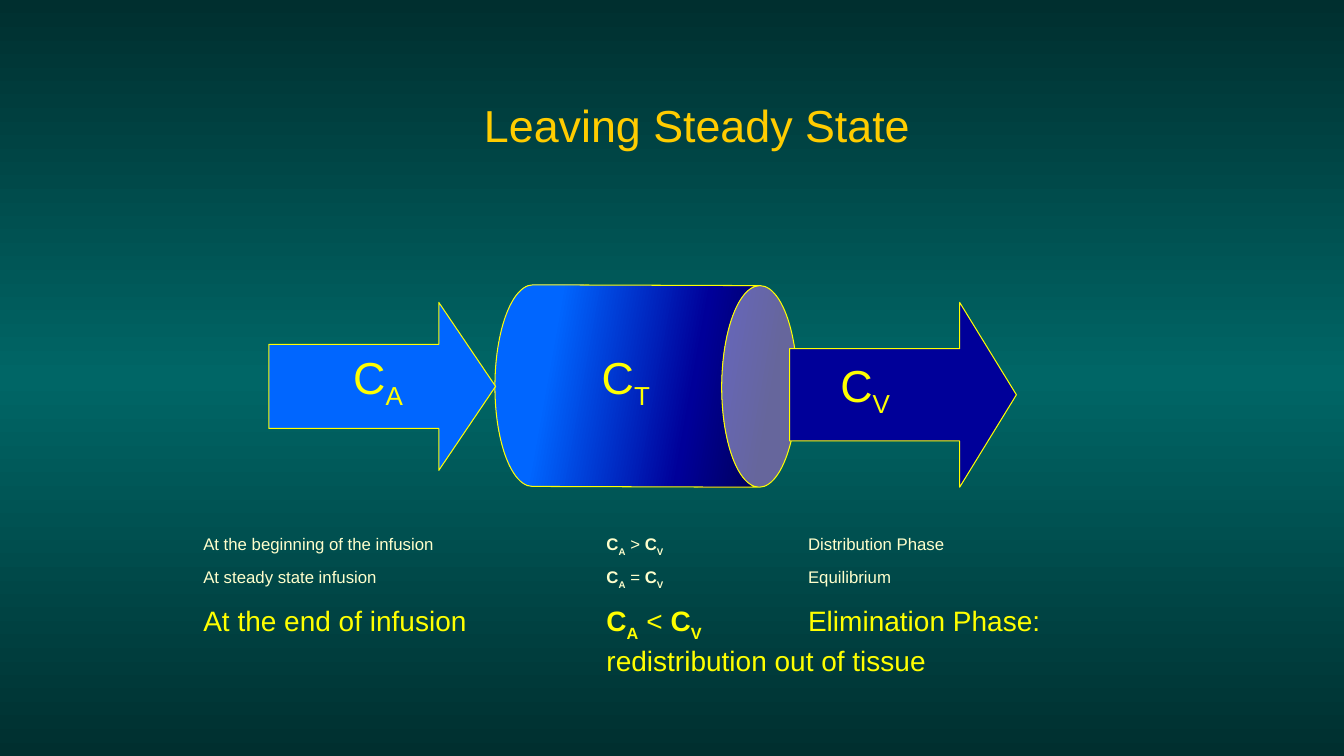
import pptx
import pptx.util
import pptx.dml.color
import pptx.enum.shapes
import pptx.enum.text
import pptx.oxml
import pptx.oxml.ns

Pt = pptx.util.Pt
RGBColor = pptx.dml.color.RGBColor
Shapes = pptx.enum.shapes.MSO_SHAPE
Text = pptx.enum.text
qn = pptx.oxml.ns.qn

YELLOW = RGBColor(0xFF, 0xFF, 0x00)
GOLD = RGBColor(0xFF, 0xCC, 0x00)
CREAM = RGBColor(0xFF, 0xFF, 0xCC)
BRIGHT_BLUE = RGBColor(0x00, 0x66, 0xFF)
NAVY = RGBColor(0x00, 0x00, 0x99)
DARK_NAVY = RGBColor(0x00, 0x00, 0x5B)
TEAL = RGBColor(0x00, 0x66, 0x66)
DARK_TEAL = RGBColor(0x00, 0x2F, 0x2F)

TAB_STEP = 144


def set_gradient(fill, stops, angle):
    """Fill with (percent, colour) stops at a clockwise angle in degrees."""
    fill.gradient()
    gradient = fill._xPr.find(qn("a:gradFill"))
    for child in list(gradient):
        gradient.remove(child)
    stop_list = pptx.oxml.parse_xml(
        f'<a:gsLst {pptx.oxml.ns.nsdecls("a")}>'
        + "".join(f'<a:gs pos="{percent * 1000}"><a:srgbClr val="{colour}"/></a:gs>'
                  for percent, colour in stops)
        + "</a:gsLst>")
    direction = pptx.oxml.parse_xml(
        f'<a:lin {pptx.oxml.ns.nsdecls("a")} ang="{angle * 60000}" scaled="0"/>')
    gradient.extend([stop_list, direction])


def add_block(page, kind, left, top, width, height, adjustments, colour=None):
    block = page.shapes.add_shape(kind, Pt(left), Pt(top), Pt(width), Pt(height))
    block.shadow.inherit = False
    for index, value in enumerate(adjustments):
        block.adjustments[index] = value
    if colour is not None:
        block.fill.solid()
        block.fill.fore_color.rgb = colour
    block.line.color.rgb = YELLOW
    block.line.width = Pt(0.75)
    return block


def add_span(para, text, size, colour, bold=False, subscript=0):
    span = para.add_run()
    span.text = text
    span.font.name = "Arial"
    span.font.size = Pt(size)
    span.font.color.rgb = colour
    span.font.bold = bold
    if subscript:
        span.font._element.set("baseline", str(-subscript * 1000))
    return span


def place(box, left, top, width, height):
    box.left, box.top, box.width, box.height = Pt(left), Pt(top), Pt(width), Pt(height)
    frame = box.text_frame
    frame.word_wrap = True
    frame.auto_size = Text.MSO_AUTO_SIZE.NONE
    frame.vertical_anchor = Text.MSO_ANCHOR.TOP
    return frame


def add_label(page, letter, left, top):
    """Add a centred concentration symbol, C with a subscript letter."""
    box = page.shapes.add_textbox(0, 0, 0, 0)
    para = place(box, left, top, 72, 45).paragraphs[0]
    para.alignment = Text.PP_ALIGN.CENTER
    add_span(para, "C", 32, YELLOW)
    add_span(para, letter, 32, YELLOW, subscript=25)


def format_row(para, space_before):
    """Remove the bullet and set the tab step."""
    para.space_before = Pt(space_before)
    properties = para._p.get_or_add_pPr()
    properties.set("marL", "0")
    properties.set("indent", "0")
    properties.set("defTabSz", str(int(Pt(TAB_STEP))))
    properties.append(pptx.oxml.parse_xml(
        f'<a:buNone {pptx.oxml.ns.nsdecls("a")}/>'))


def fill_row(para, moment, sign, phase, size=12, colour=CREAM, space_before=7):
    """Write the moment, the relation of C A to C V, and the phase."""
    format_row(para, space_before)
    add_span(para, moment, size, colour)
    for letter, after in (("A", f" {sign} "), ("V", "\t" + phase)):
        add_span(para, "C", size, colour, bold=True)
        add_span(para, letter, size, colour, bold=True, subscript=30)
        add_span(para, after, size, colour)


def main():
    deck = pptx.Presentation()
    deck.slide_width, deck.slide_height = Pt(960), Pt(540)
    page = deck.slides.add_slide(deck.slide_layouts[1])
    set_gradient(page.background.fill,
                 [(0, DARK_TEAL), (50, TEAL), (100, DARK_TEAL)], 90)

    # Title
    para = place(page.shapes.title, 210, 66, 576, 46).paragraphs[0]
    para.alignment = Text.PP_ALIGN.CENTER
    add_span(para, "Leaving Steady State", 32, GOLD)

    # Tissue cylinder between the inflow and outflow arrows
    tissue = add_block(page, Shapes.CAN, 389.5, 167.75, 144, 216, [0.375])
    tissue.rotation = 90.2
    set_gradient(tissue.fill,
                 [(12, DARK_NAVY), (36, NAVY), (80, BRIGHT_BLUE)], 100)
    add_block(page, Shapes.RIGHT_ARROW, 192, 216, 162, 120, [0.5, 0.338], BRIGHT_BLUE)
    add_block(page, Shapes.RIGHT_ARROW, 564, 216, 162, 132, [0.5, 0.307], NAVY)
    for letter, left, top in (("A", 234, 246), ("V", 582, 252), ("T", 411, 246)):
        add_label(page, letter, left, top)

    # Phases of the infusion
    frame = place(page.placeholders[1], 138, 377.3, 678, 102)
    fill_row(frame.paragraphs[0], "At the beginning of the infusion\t", ">",
             "Distribution Phase", space_before=0)
    fill_row(frame.add_paragraph(), "At steady state infusion\t\t", "=", "Equilibrium")
    final = frame.add_paragraph()
    final.line_spacing = Pt(24.5)
    fill_row(final, "At the end of infusion\t", "<", "Elimination Phase:",
             size=20, colour=YELLOW, space_before=13)
    final.add_line_break()
    add_span(final, "\t\tredistribution out of tissue", 20, YELLOW)

    deck.save("out.pptx")


if __name__ == "__main__":
    main()
